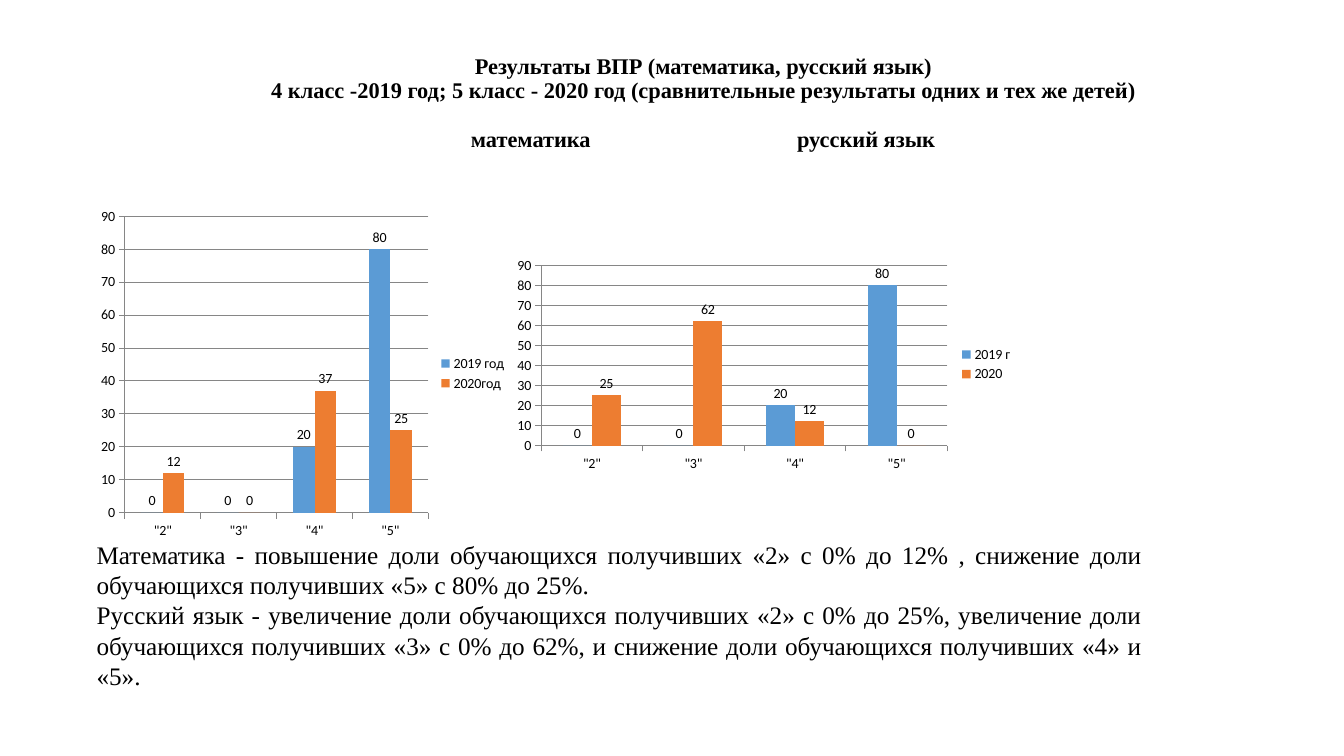
from lxml import etree
from pptx import Presentation
from pptx.chart.data import CategoryChartData
from pptx.dml.color import RGBColor
from pptx.enum.chart import XL_CHART_TYPE as ChartType, XL_LABEL_POSITION as LabelPosition
from pptx.enum.chart import XL_LEGEND_POSITION as LegendPosition, XL_TICK_MARK as TickMark
from pptx.enum.text import MSO_ANCHOR as Anchor, MSO_AUTO_SIZE as AutoSize, PP_ALIGN as Align
from pptx.oxml.ns import qn
from pptx.util import Pt

COLORS = {"text": "000000", "year_2019": "5B9BD5", "year_2020": "ED7D31", "axis": "868686"}
TEXT_FONT, CHART_FONT = "Times New Roman", "Calibri"
GRADES = ['"2"', '"3"', '"4"', '"5"']


def color(name):
    return RGBColor.from_string(COLORS[name])


class SlideBuilder:
    """Holds the shared style and the current slide."""

    def __init__(self, presentation):
        self.slide = presentation.slides.add_slide(presentation.slide_layouts[5])

    def style_font(self, font, name, size, bold=False):
        font.name, font.size, font.bold = name, Pt(size), bold
        font.color.rgb = color("text")

    def fill_text(self, frame, lines, size, align, bold=False):
        frame.text = "\n".join(lines)
        frame.word_wrap = True
        for paragraph in frame.paragraphs:
            paragraph.alignment = align
            for run in paragraph.runs:
                self.style_font(run.font, TEXT_FONT, size, bold)

    def title(self, box, lines, tab_stops):
        shape = self.slide.shapes.title
        shape.left, shape.top, shape.width, shape.height = map(Pt, box)
        frame = shape.text_frame
        self.fill_text(frame, lines, 16, Align.CENTER, bold=True)
        frame.auto_size = AutoSize.NONE
        frame.vertical_anchor = Anchor.TOP
        frame.margin_top = Pt(7.5)
        for paragraph in frame.paragraphs:
            paragraph.line_spacing = 0.9
            paragraph.space_before = Pt(0)
        # The last line names the charts, centred on tab stops
        subjects = frame.paragraphs[-1]
        subjects.alignment = Align.LEFT
        subjects.space_before = Pt(17.5)
        tab_list = etree.SubElement(subjects._p.get_or_add_pPr(), qn("a:tabLst"))
        for position in tab_stops:
            etree.SubElement(tab_list, qn("a:tab"), pos=str(Pt(position)), algn="ctr")

    def text(self, box, lines):
        shape = self.slide.shapes.add_textbox(*map(Pt, box))
        self.fill_text(shape.text_frame, lines, 18, Align.JUSTIFY)
        shape.text_frame.auto_size = AutoSize.SHAPE_TO_FIT_TEXT

    def column_chart(self, box, series_values):
        data = CategoryChartData(number_format="General")
        data.categories = GRADES
        for name, values in series_values.items():
            data.add_series(name, values)
        chart = self.slide.shapes.add_chart(
            ChartType.COLUMN_CLUSTERED, *map(Pt, box), data).chart
        self.style_font(chart.font, CHART_FONT, 10)
        chart.has_title = False
        chart.has_legend = True
        chart.legend.position = LegendPosition.RIGHT
        chart.legend.include_in_layout = False

        # Axes and gridlines
        value_axis = chart.value_axis
        value_axis.minimum_scale, value_axis.maximum_scale = 0, 90
        value_axis.major_unit = 10
        value_axis.has_major_gridlines = True
        for axis in (chart.category_axis, value_axis):
            axis.major_tick_mark = TickMark.OUTSIDE
            axis.minor_tick_mark = TickMark.NONE
        for line in (chart.category_axis.format.line, value_axis.format.line,
                     value_axis.major_gridlines.format.line):
            line.color.rgb = color("axis")
            line.width = Pt(0.75)

        # Columns and their labels
        plot = chart.plots[0]
        plot.vary_by_categories = False
        plot.gap_width, plot.overlap = 150, 0
        plot.has_data_labels = True
        labels = plot.data_labels
        labels.show_value = True
        labels.position = LabelPosition.OUTSIDE_END
        self.style_font(labels.font, CHART_FONT, 10)
        for series, name in zip(plot.series, ("year_2019", "year_2020")):
            series.format.fill.solid()
            series.format.fill.fore_color.rgb = color(name)
            series.invert_if_negative = False


def main():
    presentation = Presentation()
    presentation.slide_width, presentation.slide_height = Pt(960), Pt(540)
    builder = SlideBuilder(presentation)

    # Heading
    builder.title((88.5, 31.7, 828, 104.4), [
        "Результаты ВПР (математика, русский язык)",
        "4 класс -2019 год; 5 класс - 2020 год (сравнительные результаты одних и тех же детей)",
        "\tматематика\tрусский язык",
    ], tab_stops=(283.5, 523))

    # Mathematics and Russian charts
    builder.column_chart((66.2, 144, 303.1, 245.5), {
        "2019 год": (0, 0, 20, 80), "2020год": (12, 0, 37, 25)})
    builder.column_chart((362.2, 180.7, 368.6, 159.1), {
        "2019 г": (0, 0, 20, 80), "2020": (25, 62, 12, 0)})

    # Conclusions
    builder.text((61.9, 381.6, 761, 116.6), [
        "Математика - повышение доли обучающихся получивших «2» с 0% до 12% , "
        "снижение доли обучающихся получивших «5» с 80% до 25%.",
        "Русский язык - увеличение доли обучающихся получивших «2» с 0% до 25%, "
        "увеличение доли обучающихся получивших «3» с 0% до 62%, "
        "и снижение доли обучающихся получивших «4» и «5».",
    ])
    presentation.save("out.pptx")


if __name__ == "__main__":
    main()
